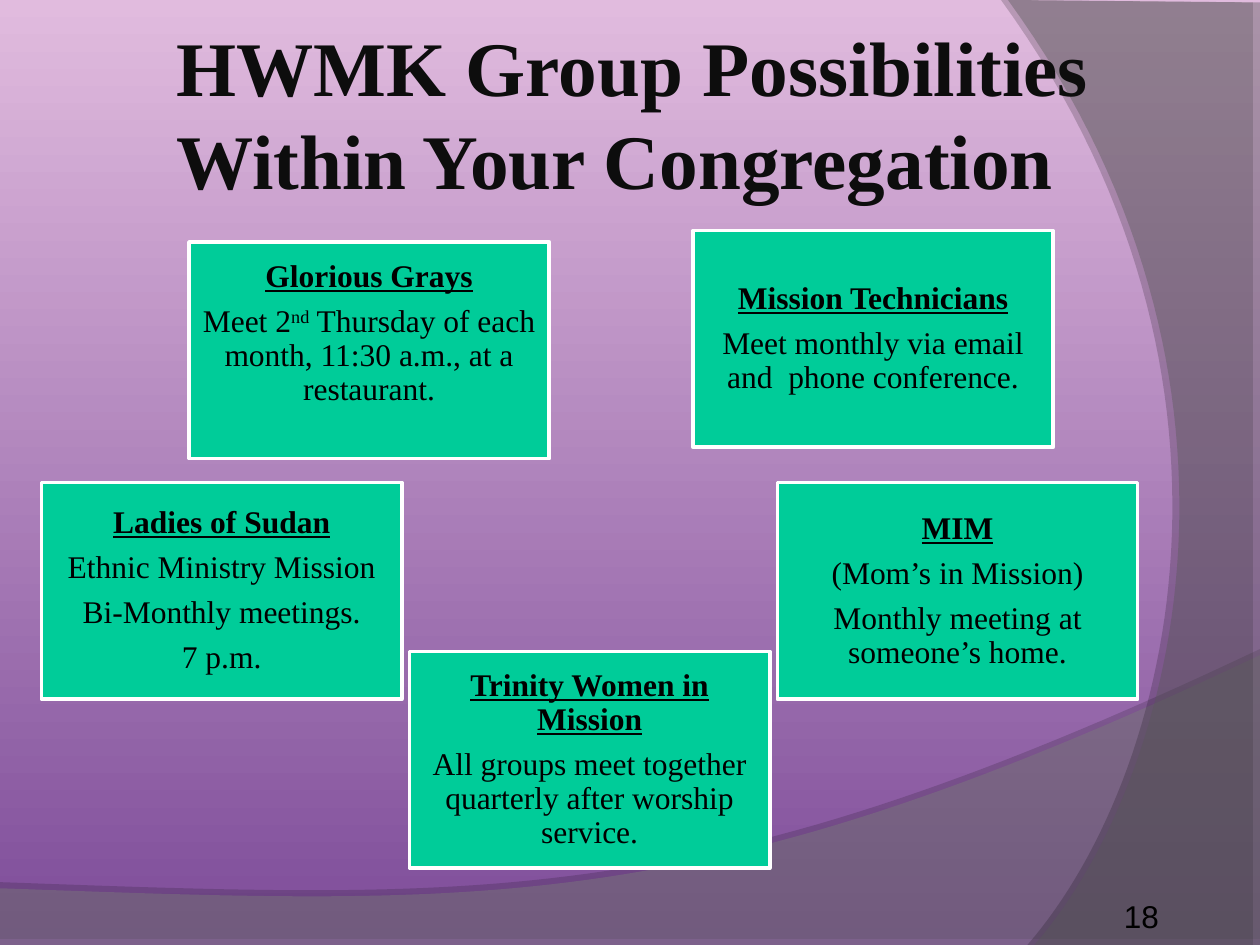
import pptx
import pptx.util
import pptx.dml.color
import pptx.enum.shapes
import pptx.enum.text
import pptx.oxml
import pptx.oxml.ns

Inches = pptx.util.Inches
Pt = pptx.util.Pt
Anchor = pptx.enum.text.MSO_ANCHOR
Align = pptx.enum.text.PP_ALIGN

COLORS = {
    "sky": "E1BBDE", "dusk": "7D4C99", "wave": "7C7C7C", "arc": "595959",
    "title": "0D0D0D", "card": "00CC99", "border": "FFFFFF", "text": "000000",
}
SERIF = "Times New Roman"
CARD_SIZE = (2.86, 1.72)
CARDS = [
    (1.5, 1.92, 0.33, "Glorious Grays",
     [["Meet 2", "^nd", " Thursday of each month, 11:30 a.m., at a restaurant."]]),
    (5.5, 1.83, 0.07, "Mission Technicians",
     [["Meet monthly via email and  phone conference."]]),
    (6.17, 3.83, 0.07, "MIM",
     [["(Mom’s in Mission)"], ["Monthly meeting at someone’s home."]]),
    (0.33, 3.83, 0.07, "Ladies of Sudan",
     [["Ethnic Ministry Mission"], ["Bi-Monthly meetings."], ["7 p.m."]]),
    (3.25, 5.17, 0.07, "Trinity Women in Mission",
     [["All groups meet together quarterly after worship service."]]),
]


def color(name):
    return pptx.dml.color.RGBColor.from_string(COLORS[name])


def curve(start, first, second, end, steps=60):
    points = []
    for step in range(1, steps + 1):
        t = step / steps
        weights = ((1 - t) ** 3, 3 * t * (1 - t) ** 2, 3 * t * t * (1 - t), t ** 3)
        points.append(tuple(
            sum(w * p[axis] for w, p in zip(weights, (start, first, second, end)))
            for axis in (0, 1)))
    return points


class SlideBuilder:
    def __init__(self, page):
        self.page = page

    def background(self, top, bottom):
        fill = self.page.background.fill
        fill.gradient()
        fill.gradient_angle = 270
        for stop, name, position in zip(fill.gradient_stops, (top, bottom), (0, 1)):
            stop.color.rgb = color(name)
            stop.position = position

    def swoosh(self, points, name, alpha, shadow_alpha, distance, angle):
        builder = self.page.shapes.build_freeform(
            *(Inches(value) for value in points[0]), scale=1.0)
        builder.add_line_segments([(Inches(x), Inches(y)) for x, y in points[1:]])
        shape = builder.convert_to_shape()
        shape.fill.solid()
        shape.fill.fore_color.rgb = color(name)
        shape.line.fill.background()
        namespace = pptx.oxml.ns.nsdecls("a")
        tint = shape._element.spPr.find(".//" + pptx.oxml.ns.qn("a:srgbClr"))
        tint.append(pptx.oxml.parse_xml(f'<a:alpha {namespace} val="{alpha * 1000}"/>'))
        shape._element.spPr.append(pptx.oxml.parse_xml(
            f'<a:effectLst {namespace}><a:outerShdw blurRad="0" dist="{Pt(distance)}" '
            f'dir="{angle * 60000}" algn="ctr" rotWithShape="0"><a:srgbClr val="000000">'
            f'<a:alpha val="{shadow_alpha * 1000}"/></a:srgbClr></a:outerShdw></a:effectLst>'))

    def frame(self, shape, anchor, margins):
        frame = shape.text_frame
        frame.word_wrap = True
        frame.vertical_anchor = anchor
        (frame.margin_left, frame.margin_top,
         frame.margin_right, frame.margin_bottom) = map(Inches, margins)
        return frame

    def font(self, para, name, size, tint, bold=False, underline=False):
        para.font.name = name
        para.font.size = Pt(size)
        para.font.color.rgb = color(tint)
        para.font.bold = bold
        para.font.underline = underline

    def label(self, place, lines, name, size, tint, anchor, margins, bold=False):
        box = self.page.shapes.add_textbox(*map(Inches, place))
        frame = self.frame(box, anchor, margins)
        for index, line in enumerate(lines):
            para = frame.add_paragraph() if index else frame.paragraphs[0]
            para.text = line
            self.font(para, name, size, tint, bold)

    def card(self, left, top, bottom_margin, heading, body):
        box = self.page.shapes.add_shape(
            pptx.enum.shapes.MSO_SHAPE.RECTANGLE,
            *map(Inches, (left, top, *CARD_SIZE)))
        box.shadow.inherit = False
        box.fill.solid()
        box.fill.fore_color.rgb = color("card")
        box.line.color.rgb = color("border")
        box.line.width = Pt(2)
        frame = self.frame(box, Anchor.MIDDLE, (0.07, 0.07, 0.07, bottom_margin))
        for index, parts in enumerate([[heading], *body]):
            para = frame.add_paragraph() if index else frame.paragraphs[0]
            para.alignment = Align.CENTER
            para.line_spacing = 0.9
            para.space_after = Pt(6.3)
            self.font(para, SERIF, 18, "text", bold=index == 0, underline=index == 0)
            for part in parts:
                span = para.add_run()
                span.text = part.lstrip("^")
                if part.startswith("^"):
                    span._r.get_or_add_rPr().set("baseline", "30000")


def main():
    deck = pptx.Presentation()
    deck.slide_width, deck.slide_height = Inches(10), Inches(7.5)
    slide = SlideBuilder(deck.slides.add_slide(deck.slide_layouts[6]))
    slide.background("sky", "dusk")

    wave = [(0, 7.05), (0, 7.5), (10, 7.5), (10, 5.2)]
    wave += curve(wave[-1], (5.59, 7.29), (3.91, 7.19), (0, 7.05))
    slide.swoosh(wave, "wave", 45, 35, 3.5, 270)
    arc = [(10, 0.02), (10, 7.5), (8.21, 7.5)]
    arc += curve(arc[-1], (9.35, 6.19), (10.18, 3), (8, 0)) + arc[:1]
    slide.swoosh(arc, "arc", 40, 45, 4, 180)

    slide.label((0.25, 0.11, 8.83, 1.56),
                ["HWMK Group Possibilities", "Within Your Congregation"],
                SERIF, 44.1, "title", Anchor.MIDDLE, (1.15, 0.05, 0.05, 0.05), bold=True)
    for card in CARDS:
        slide.card(*card)
    slide.label((8.92, 7.02, 0.83, 0.4), ["18"], "Arial", 18, "text",
                Anchor.BOTTOM, (0, 0, 0, 0))
    deck.save("out.pptx")


if __name__ == "__main__":
    main()
